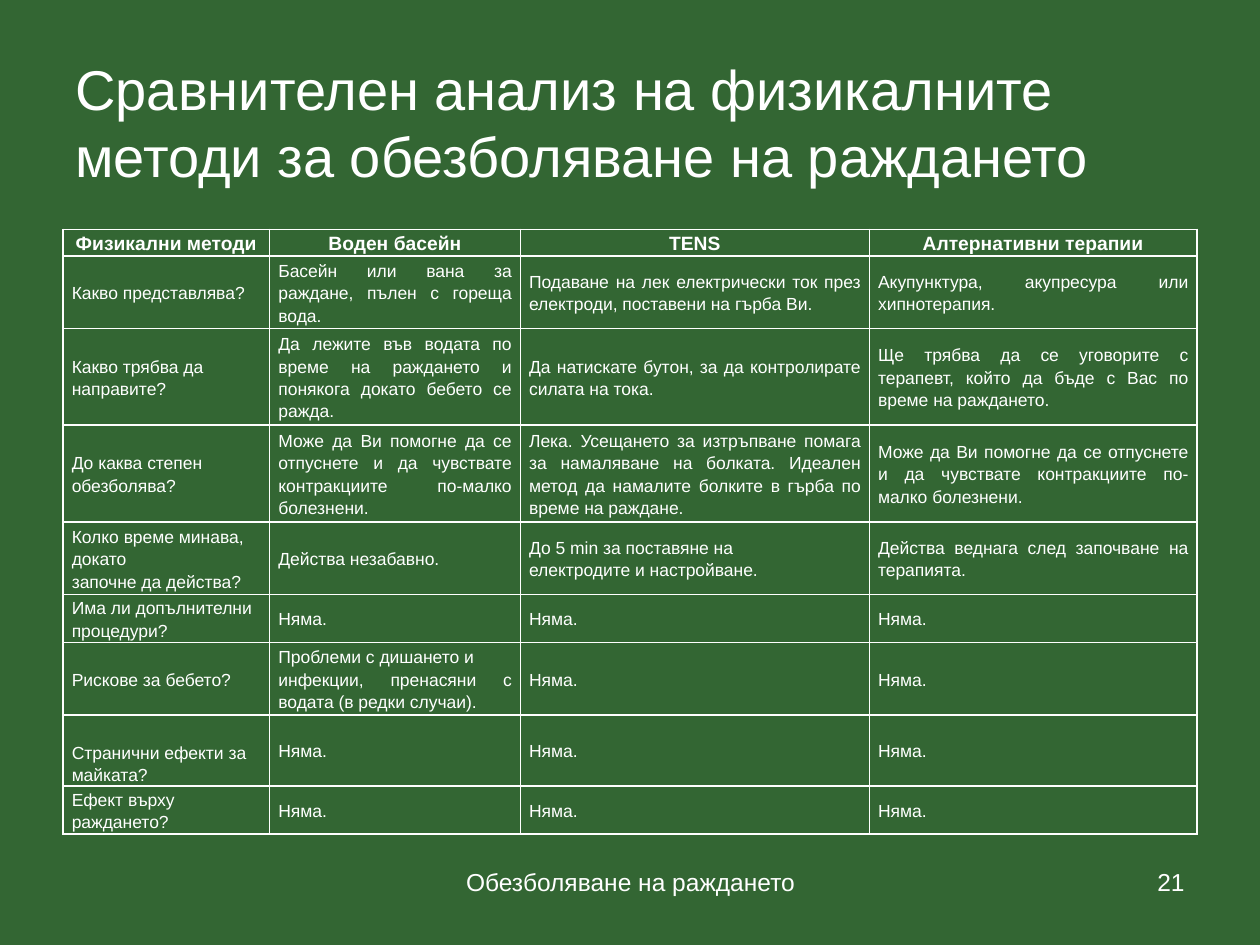
from lxml import etree
from pptx import Presentation
from pptx.dml.color import RGBColor
from pptx.enum.text import MSO_ANCHOR as ANCHOR, PP_ALIGN as ALIGN
from pptx.oxml.ns import qn
from pptx.util import Inches, Pt

GREEN = RGBColor(0x33, 0x66, 0x33)
WHITE = RGBColor(0xFF, 0xFF, 0xFF)

prs = Presentation()
prs.slide_width, prs.slide_height = Inches(10), Inches(7.5)
U = prs.slide_width / 100  # grid of 100 columns by 75 rows

s = prs.slides.add_slide(prs.slide_layouts[6])
s.background.fill.solid()
s.background.fill.fore_color.rgb = GREEN


def write(tf, text, size, align=ALIGN.LEFT, bold=False, spacing=1.0):
    """Fill a text frame, one paragraph for each line of the text."""
    tf.word_wrap = True
    for i, line in enumerate(text.split("\n")):
        p = tf.add_paragraph() if i else tf.paragraphs[0]
        p.alignment, p.line_spacing = align, spacing
        r = p.add_run()
        r.text = line
        r.font.name, r.font.size, r.font.bold = "Arial", Pt(size), bold
        r.font.color.rgb = WHITE


def set_borders(cell):
    """Draw a thin white line on every side of a table cell."""
    tc_pr = cell._tc.get_or_add_tcPr()
    for i, side in enumerate(("a:lnL", "a:lnR", "a:lnT", "a:lnB")):
        ln = etree.Element(qn(side), w=str(Pt(1)))
        fill = etree.SubElement(ln, qn("a:solidFill"))
        etree.SubElement(fill, qn("a:srgbClr"), val=str(WHITE))
        tc_pr.insert(i, ln)


# Title, footer and slide number
for x, y, w, h, text, size, align, anchor in (
    (5, 3, 90, 12.5, "Сравнителен анализ на физикалните методи за обезболяване на раждането",
     32, ALIGN.LEFT, ANCHOR.BOTTOM),
    (34.2, 68.3, 31.7, 5.2, "Обезболяване на раждането", 14, ALIGN.CENTER, ANCHOR.TOP),
    (71.7, 68.3, 23.3, 5.2, "21", 14, ALIGN.RIGHT, ANCHOR.TOP),
):
    tf = s.shapes.add_textbox(*(int(v * U) for v in (x, y, w, h))).text_frame
    tf.vertical_anchor = anchor
    write(tf, text, size, align)

# Comparison table
NONE = "Няма."
RELIEF = "Може да Ви помогне да се отпуснете и да чувствате контракциите по-малко болезнени."
ROWS = [
    ("Физикални методи", "Воден басейн", "TENS", "Алтернативни терапии"),
    ("Какво представлява?",
     "Басейн или вана за раждане, пълен с гореща вода.",
     "Подаване на лек електрически ток през електроди, поставени на гърба Ви.",
     "Акупунктура, акупресура или хипнотерапия."),
    ("Какво трябва да направите?",
     "Да лежите във водата по време на раждането и понякога докато бебето се ражда.",
     "Да натискате бутон, за да контролирате силата на тока.",
     "Ще трябва да се уговорите с терапевт, който да бъде с Вас по време на раждането."),
    ("До каква степен\nобезболява?",
     RELIEF,
     "Лека. Усещането за изтръпване помага за намаляване на болката. "
     "Идеален метод да намалите болките в гърба по време на раждане.",
     RELIEF),
    ("Колко време минава, докато\nзапочне да действа?",
     "Действа незабавно.",
     "До 5 min за поставяне на\nелектродите и настройване.",
     "Действа веднага след започване на терапията."),
    ("Има ли допълнителни\nпроцедури?", NONE, NONE, NONE),
    ("Рискове за бебето?",
     "Проблеми с дишането и\nинфекции, пренасяни с водата (в редки случаи).",
     NONE, NONE),
    ("Странични ефекти за\nмайката?", NONE, NONE, NONE),
    ("Ефект върху раждането?", NONE, NONE, NONE),
]
WIDTHS = (16.4, 19.9, 27.7, 26)
HEIGHTS = (2, 5.4, 7.4, 7.4, 5.6, 3.7, 5.6, 5.6, 3.7)
SIDE_EFFECTS = 7  # this row's question sits at the bottom of its cell

table = s.shapes.add_table(
    len(ROWS), len(WIDTHS), int(5 * U), int(18.2 * U),
    int(sum(WIDTHS) * U), int(sum(HEIGHTS) * U)).table
table.first_row = table.horz_banding = False
for column, width in zip(table.columns, WIDTHS):
    column.width = int(width * U)

for i, (texts, height) in enumerate(zip(ROWS, HEIGHTS)):
    table.rows[i].height = int(height * U)
    for j, text in enumerate(texts):
        cell = table.cell(i, j)
        cell.fill.background()
        set_borders(cell)
        cell.margin_left = cell.margin_right = Inches(0.07)
        cell.margin_top = cell.margin_bottom = 0
        at_bottom = (i, j) == (SIDE_EFFECTS, 0)
        cell.vertical_anchor = ANCHOR.BOTTOM if at_bottom else ANCHOR.MIDDLE
        if i == 0:
            write(cell.text_frame, text, 11, ALIGN.CENTER, bold=True, spacing=1.15)
        else:
            align = ALIGN.JUSTIFY if j else ALIGN.LEFT
            write(cell.text_frame, text, 10, align, spacing=1.15)

prs.save("out.pptx")
